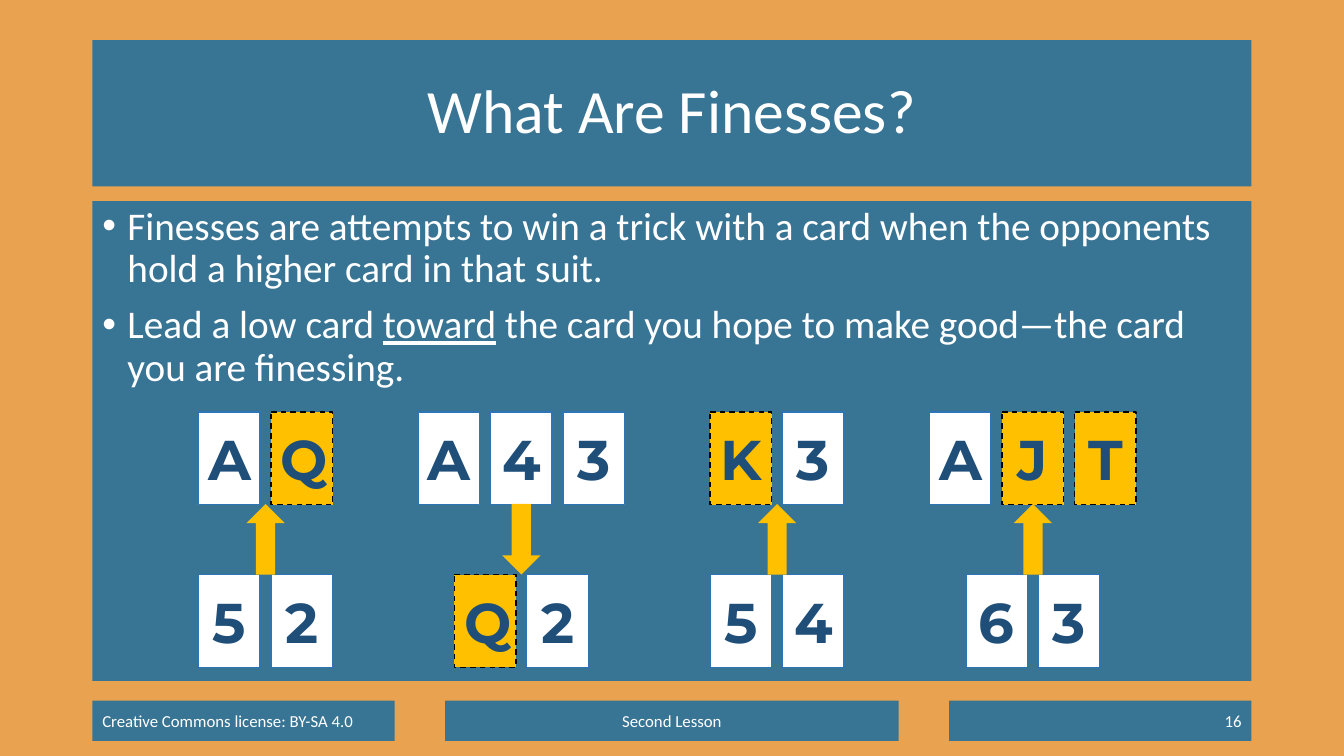
from pptx import Presentation
from pptx.dml.color import RGBColor
from pptx.enum.dml import MSO_LINE
from pptx.enum.shapes import MSO_SHAPE as Kind
from pptx.enum.text import MSO_ANCHOR as Anchor, PP_ALIGN as Align
from pptx.oxml.ns import qn
from pptx.util import Pt
from lxml import etree

SAND, TEAL, WHITE = "E9A350", "387494", "FFFFFF"
GOLD, NAVY, BLUE, BLACK = "FFC000", "1F4E79", "2E75B6", "000000"

TITLE = "What Are Finesses?"
# Each bullet is a list of (text, underlined) runs
BULLETS = [
    [("Finesses are attempts to win a trick with a card when the opponents "
      "hold a higher card in that suit.", False)],
    [("Lead a low card ", False), ("toward", True),
     (" the card you hope to make good—the card you are finessing.", False)],
]
# Left, width, text, alignment
FOOTERS = [
    (66, 216, "Creative Commons license: BY-SA 4.0", Align.LEFT),
    (318, 324, "Second Lesson", Align.CENTER),
    (678, 216, "16", Align.RIGHT),
]
# Top hand, bottom hand, finessed cards, arrow
HANDS = [
    ("AQ", "52", "Q", Kind.UP_ARROW),
    ("A43", "Q2", "Q", Kind.DOWN_ARROW),
    ("K3", "54", "K", Kind.UP_ARROW),
    ("AJT", "63", "JT", Kind.UP_ARROW),
]

FIRST, STEP = 189.7, 182.7      # centre of the first hand, distance to the next
CARD_W, CARD_H, PITCH = 44, 66.2, 51.8
TOP, BOTTOM = 294.3, 410.4
ARROW_W, ARROW_H = 27.4, 50.4


def color(text):
    return RGBColor.from_string(text)


def add_box(x, y, w, h, fill, kind=Kind.RECTANGLE, anchor=Anchor.MIDDLE):
    box = slide.shapes.add_shape(kind, Pt(x), Pt(y), Pt(w), Pt(h))
    box.shadow.inherit = False
    box.fill.solid()
    box.fill.fore_color.rgb = color(fill)
    box.line.fill.background()
    box.text_frame.word_wrap = True
    box.text_frame.vertical_anchor = anchor
    return box


def add_run(para, text, size, ink=WHITE, face="Calibri"):
    run = para.add_run()
    run.text = text
    run.font.size = Pt(size)
    run.font.name = face
    run.font.color.rgb = color(ink)
    return run


def add_line(box, text, size, align=Align.CENTER, **style):
    para = box.text_frame.paragraphs[0]
    para.alignment = align
    return para, add_run(para, text, size, **style)


def add_bullet(para):
    props = para._p.get_or_add_pPr()
    props.set("marL", str(Pt(18)))
    props.set("indent", str(-Pt(18)))
    etree.SubElement(props, qn("a:buFont")).set("typeface", "Arial")
    etree.SubElement(props, qn("a:buChar")).set("char", "•")


def add_cards(ranks, mid, y, goal):
    """Draw one row of cards centred on mid, with the goal cards in gold."""
    left = mid - ((len(ranks) - 1) * PITCH + CARD_W) / 2
    for i, rank in enumerate(ranks):
        gold = rank in goal
        card = add_box(left + i * PITCH, y, CARD_W, CARD_H,
                       GOLD if gold else WHITE, Kind.FLOWCHART_PROCESS)
        card.line.color.rgb = color(BLACK if gold else BLUE)
        card.line.width = Pt(1)
        if gold:
            card.line.dash_style = MSO_LINE.DASH
        _, run = add_line(card, rank, 40, ink=NAVY, face="Montserrat")
        run.font.bold = True


deck = Presentation()
deck.slide_width, deck.slide_height = Pt(960), Pt(540)
slide = deck.slides.add_slide(deck.slide_layouts[6])
slide.background.fill.solid()
slide.background.fill.fore_color.rgb = color(SAND)

para, _ = add_line(add_box(66, 28.75, 828, 104.4, TEAL), TITLE, 44)
para.line_spacing = 0.9

body = add_box(66, 143.75, 828, 342.6, TEAL, anchor=Anchor.TOP).text_frame
for i, runs in enumerate(BULLETS):
    para = body.add_paragraph() if i else body.paragraphs[0]
    para.alignment = Align.LEFT
    para.line_spacing = 0.9
    para.space_before = Pt(10)
    add_bullet(para)
    for text, under in runs:
        run = add_run(para, text, 28)
        if under:
            run.font.underline = True

for x, w, text, align in FOOTERS:
    add_line(add_box(x, 500.5, w, 28.75, TEAL), text, 12, align)

for i, (top, low, goal, arrow) in enumerate(HANDS):
    mid = FIRST + i * STEP
    add_cards(top, mid, TOP, goal)
    add_cards(low, mid, BOTTOM, goal)
    add_box(mid - ARROW_W / 2, BOTTOM - ARROW_H, ARROW_W, ARROW_H, GOLD, arrow)

deck.save("out.pptx")
